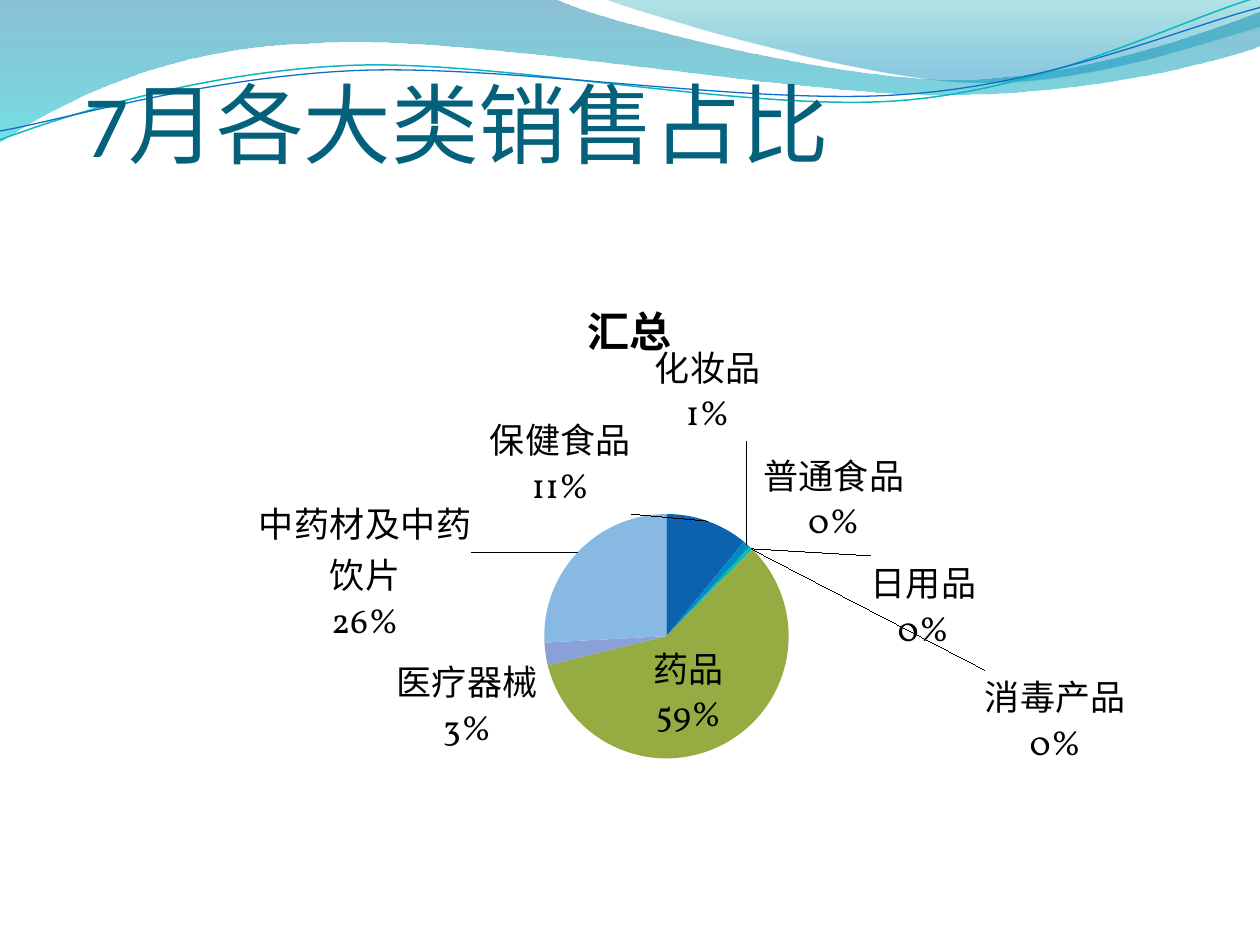
from lxml.etree import SubElement
from pptx import Presentation
from pptx.chart.data import CategoryChartData
from pptx.dml.color import RGBColor
from pptx.enum.chart import XL_CHART_TYPE as ChartType
from pptx.enum.text import MSO_ANCHOR, MSO_AUTO_SIZE, PP_ALIGN
from pptx.oxml import parse_xml
from pptx.oxml.ns import nsdecls, qn
from pptx.util import Inches, Pt

WHITE = RGBColor(0xFF, 0xFF, 0xFF)
BLACK = RGBColor(0, 0, 0)
TITLE_TEAL = RGBColor(0x04, 0x61, 0x7B)
DEEP_BLUE = RGBColor(0x00, 0x74, 0xA1)
CYAN = RGBColor(0x00, 0xC6, 0xCF)
TEAL = RGBColor(0x00, 0xA1, 0xA9)
SKY = RGBColor(0x00, 0x8B, 0xBF)
LINE_TEAL = RGBColor(0x0A, 0xB8, 0xBF)
LINE_BLUE = RGBColor(0x0F, 0x6F, 0xC6)
CHART_W, CHART_H = 9, 4.8

prs = Presentation()
prs.slide_width, prs.slide_height = Inches(10), Inches(7.5)
slide = prs.slides.add_slide(prs.slide_layouts[5])
slide.background.fill.solid()
slide.background.fill.fore_color.rgb = WHITE


def add_wave(segments, closed):
    """Draw segments in inches: one point is a straight step, three a Bezier."""
    points = [(Inches(seg[i]), Inches(seg[i + 1]))
              for seg in segments for i in range(0, len(seg), 2)]
    builder = slide.shapes.build_freeform(*points[0])
    builder.add_line_segments(points[1:], close=closed)
    wave = builder.convert_to_shape()
    wave.shadow.inherit = False
    steps = iter(list(wave._element.iter(qn("a:lnTo"))))
    for segment in segments[1:]:
        step = next(steps)
        if len(segment) == 6:
            curve = parse_xml(f'<a:cubicBezTo {nsdecls("a")}/>')
            step.addprevious(curve)
            for control in (step, next(steps), next(steps)):
                curve.append(control[0])
                control.getparent().remove(control)
    return wave


# Header bands: outline, then (position, colour, opacity %) stops from the top
bands = [
    ([(0, 0), (4.4, -0.01), (4.76, 0.17, 6.64, 0.63, 7.58, 0.63),
      (8.53, 0.63, 9.58, 0.26, 10, 0.09), (10.01, 0.36),
      (9.83, 0.44, 8.7, 0.76, 7.46, 0.75), (6.22, 0.75, 3.82, 0.28, 2.57, 0.34),
      (1.29, 0.36, 0.46, 0.83, -0.01, 1.13)],
     [(0, DEEP_BLUE, 45), (1, CYAN, 55)]),
    ([(4.79, -0.01), (5.09, 0.11, 6.82, 0.62, 7.69, 0.65),
      (8.56, 0.69, 9.61, 0.32, 10, 0.21), (10, 0)],
     [(0, TEAL, 30), (0.8, SKY, 45)]),
]
for outline, stops in bands:
    band = add_wave(outline, True)
    band.line.fill.background()
    band.fill.gradient()
    band.fill.gradient_angle = 270
    for stop, (position, colour, _) in zip(band.fill.gradient_stops, stops):
        stop.position = position
        stop.color.rgb = colour
    for node, (_, _, opacity) in zip(band._element.iter(qn("a:srgbClr")), stops):
        SubElement(node, qn("a:alpha")).set("val", str(opacity * 1000))

ribbons = [
    ([(0, 1.11), (0.48, 0.93, 1.58, 0.57, 2.77, 0.52),
      (3.95, 0.47, 5.93, 0.89, 7.13, 0.8), (8.33, 0.71, 9.38, 0.15, 9.98, -0.02)],
     LINE_TEAL, 0.85),
    ([(0, 1.04), (0.47, 0.96, 1.64, 0.61, 2.83, 0.56),
      (4.03, 0.51, 5.97, 0.84, 7.17, 0.75), (8.36, 0.67, 9.41, 0.21, 10, 0.06)],
     LINE_BLUE, 0.75),
]
for outline, colour, weight in ribbons:
    ribbon = add_wave(outline, False)
    ribbon.fill.background()
    ribbon.line.color.rgb = colour
    ribbon.line.width = Pt(weight)

# Title, brought in front of the waves
title = slide.shapes.title
slide.shapes._spTree.append(title._element)
title.left, title.top = Inches(0.67), Inches(0.21)
title.width, title.height = Inches(8.83), Inches(1.18)
frame = title.text_frame
frame.text = "7月各大类销售占比"
frame.auto_size = MSO_AUTO_SIZE.NONE
frame.vertical_anchor = MSO_ANCHOR.BOTTOM
frame.margin_left = frame.margin_right = frame.margin_bottom = 0
frame.margin_top = Inches(0.05)
heading = frame.paragraphs[0]
heading.alignment = PP_ALIGN.LEFT
heading.font.name, heading.font.size = "Calibri", Pt(50)
heading.font.color.rgb = TITLE_TEAL

# Category, share, colour, label position, label shift in inches.
# Shares that round to 0% stay above zero so that their labels are drawn.
sales = [
    ("保健食品", 11, "0D62B0", "outEnd", (-1.75, 0)),
    ("化妆品", 1, "008BC1", "outEnd", (-0.77, -0.77)),
    ("普通食品", 0.3, "0AB8C0", "outEnd", (0.06, 0.06)),
    ("日用品", 0.2, "0EB78A", "outEnd", (0.9, 0.9)),
    ("消毒产品", 0.1, "6EB356", "outEnd", (1.8, 1.8)),
    ("药品", 59, "94AC41", "ctr", (-0.06, 0.02)),
    ("医疗器械", 3, "8AA0D8", "outEnd", None),
    ("中药材及中药饮片", 26, "87B9E2", "outEnd", (-0.8, 0.81)),
    ("(空白)", None, "0BD0D9", "outEnd", None),
]
data = CategoryChartData()
data.categories = [row[0] for row in sales]
data.add_series("汇总", [row[1] for row in sales])
chart = slide.shapes.add_chart(ChartType.PIE, Inches(0.5), Inches(2.12),
                               Inches(CHART_W), Inches(CHART_H), data).chart
chart.has_legend = False
chart.font.name, chart.font.size = "Vollkorn", Pt(20)
chart.font.color.rgb = BLACK
chart.has_title = True
chart.chart_title.text_frame.text = "汇总"
caption = chart.chart_title.text_frame.paragraphs[0].font
caption.name, caption.size, caption.bold = "Vollkorn", Pt(24), True
caption.color.rgb = BLACK
chart.plots[0].vary_by_categories = True

series = chart.plots[0].series[0]
SHOWN = ('<c:showLegendKey val="0"/><c:showVal val="0"/><c:showCatName val="1"/>'
         '<c:showSerName val="0"/><c:showPercent val="1"/><c:showBubbleSize val="0"/>'
         '<c:separator>\n</c:separator>')
labels = ""
for index, (_, value, colour, position, shift) in enumerate(sales):
    slice_format = series.points[index].format
    slice_format.fill.solid()
    slice_format.fill.fore_color.rgb = RGBColor.from_string(colour)
    slice_format.line.fill.background()
    if shift:
        dx, dy = shift
        labels += (f'<c:dLbl><c:idx val="{index}"/><c:layout><c:manualLayout>'
                   f'<c:x val="{dx / CHART_W}"/><c:y val="{dy / CHART_H}"/>'
                   '</c:manualLayout></c:layout>'
                   f'<c:dLblPos val="{position}"/>{SHOWN}</c:dLbl>')
series._element.find(qn("c:cat")).addprevious(parse_xml(
    f'<c:dLbls {nsdecls("c")}>{labels}<c:dLblPos val="outEnd"/>{SHOWN}'
    '<c:showLeaderLines val="1"/></c:dLbls>'))

# Fix the pie's place inside the chart
PIE_LEFT, PIE_TOP, PIE_SIZE = 3.82, 1.96, 1.94
plot_area = chart._chartSpace.find(".//" + qn("c:plotArea"))
for layout in plot_area.findall(qn("c:layout")):
    plot_area.remove(layout)
plot_area.insert(0, parse_xml(
    f'<c:layout {nsdecls("c")}><c:manualLayout><c:layoutTarget val="inner"/>'
    '<c:xMode val="edge"/><c:yMode val="edge"/>'
    f'<c:x val="{PIE_LEFT / CHART_W}"/><c:y val="{PIE_TOP / CHART_H}"/>'
    f'<c:w val="{PIE_SIZE / CHART_W}"/><c:h val="{PIE_SIZE / CHART_H}"/>'
    '</c:manualLayout></c:layout>'))

prs.save("out.pptx")
